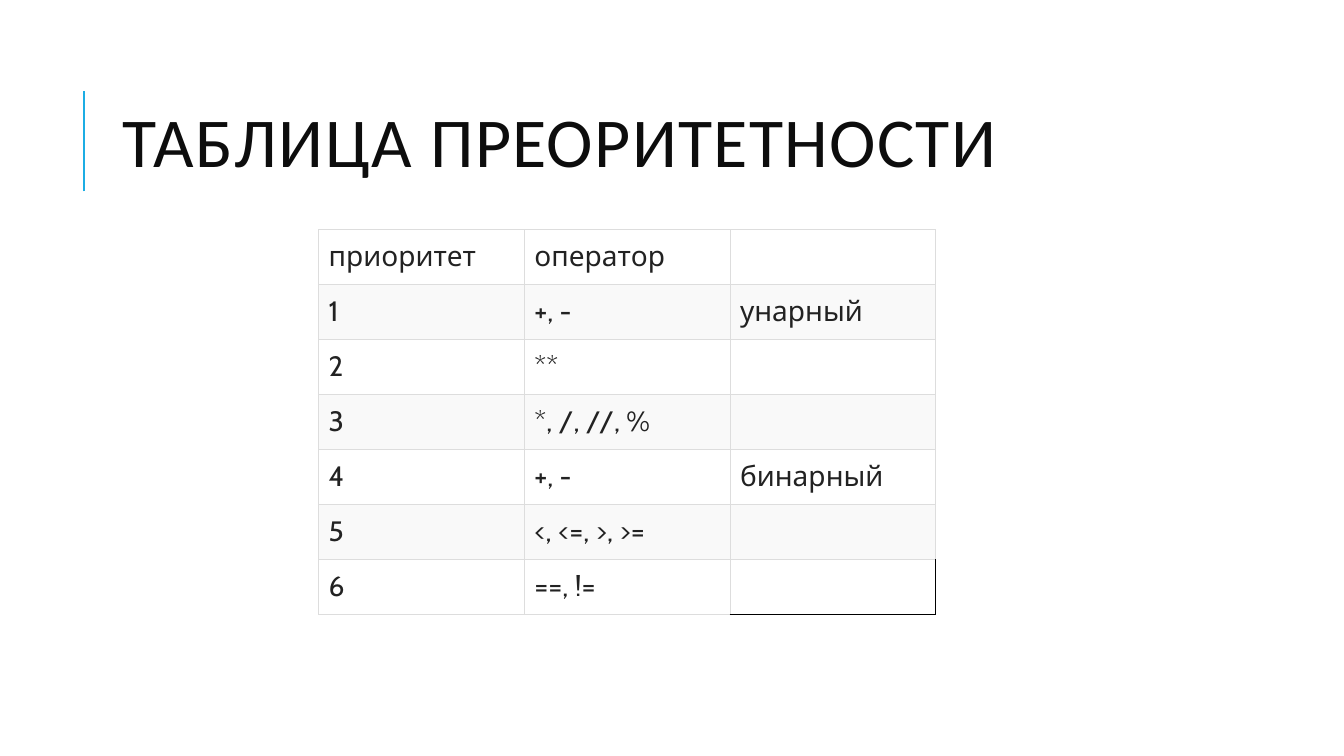
from dataclasses import dataclass

from lxml.etree import SubElement
from pptx import Presentation
from pptx.dml.color import RGBColor as Color
from pptx.enum.shapes import MSO_CONNECTOR as Connector
from pptx.enum.text import MSO_ANCHOR as Anchor
from pptx.oxml.ns import qn
from pptx.util import Inches, Pt


@dataclass(frozen=True)
class Theme:
    accent: str = "1CADE4"
    title_color: str = "0D0D0D"
    text_color: str = "222222"
    border: str = "DDDDDD"
    corner_border: str = "000000"
    row_fills: tuple[str, str] = ("FFFFFF", "F9F9F9")
    title_font: str = "Calibri"
    table_font: str = "Cabin"
    title_size: int = 50
    table_size: int = 20
    title_spacing: int = 100
    accent_width: float = 1.5
    border_width: float = 0.75


@dataclass(frozen=True)
class Box:
    """Position and size in percent of the slide."""
    left: float
    top: float
    width: float
    height: float

    def place(self) -> tuple[int, int, int, int]:
        return (across(self.left), down(self.top),
                across(self.width), down(self.height))


@dataclass(frozen=True)
class Priority:
    level: str
    operators: str
    note: str = ""

    def texts(self) -> tuple[str, str, str]:
        return self.level, self.operators, self.note


THEME = Theme()
SLIDE_WIDTH, SLIDE_HEIGHT = Inches(13.33), Inches(7.5)
COLUMN_WIDTH, ROW_HEIGHT = 15.31, 7.28
ACCENT_BOX = Box(6.25, 12, 0, 13.33)
TITLE_BOX = Box(8.4, 8.53, 79.74, 21.87)
TITLE = "ТАБЛИЦА ПРЕОРИТЕТНОСТИ"
PRIORITIES = [
    Priority("приоритет", "оператор"),
    Priority("1", "+, -", "унарный"),
    Priority("2", "**"),
    Priority("3", "*, /, //, %"),
    Priority("4", "+, -", "бинарный"),
    Priority("5", "<, <=, >, >="),
    Priority("6", "==, !="),
]
COLUMN_COUNT = len(PRIORITIES[0].texts())
TABLE_BOX = Box(23.7, 30.35, COLUMN_WIDTH * COLUMN_COUNT,
                ROW_HEIGHT * len(PRIORITIES))


def across(percent: float) -> int:
    return round(SLIDE_WIDTH * percent / 100)


def down(percent: float) -> int:
    return round(SLIDE_HEIGHT * percent / 100)


def style_font(font, name: str, size: int, color: str) -> None:
    font.name, font.size = name, Pt(size)
    font.color.rgb = Color.from_string(color)


def draw_accent(slide, box: Box) -> None:
    left, top, width, height = box.place()
    line = slide.shapes.add_connector(
        Connector.STRAIGHT, left, top + height, left + width, top)
    line.line.color.rgb = Color.from_string(THEME.accent)
    line.line.width = Pt(THEME.accent_width)
    SubElement(line._element.spPr, qn("a:effectLst"))


def draw_title(slide, text: str, box: Box) -> None:
    frame = slide.shapes.add_textbox(*box.place()).text_frame
    frame.word_wrap = True
    frame.vertical_anchor = Anchor.MIDDLE
    paragraph = frame.paragraphs[0]
    paragraph.line_spacing = 0.8
    run = paragraph.add_run()
    run.text = text
    style_font(paragraph.font, THEME.title_font, THEME.title_size,
               THEME.title_color)
    run.font._element.set("spc", str(THEME.title_spacing))


def set_borders(cell, colors: dict[str, str]) -> None:
    properties = cell._tc.get_or_add_tcPr()
    for side, color in colors.items():
        line = SubElement(properties, qn(f"a:ln{side}"),
                          w=str(Pt(THEME.border_width)))
        SubElement(SubElement(line, qn("a:solidFill")),
                   qn("a:srgbClr"), val=color)


def draw_table(slide, priorities: list[Priority], box: Box) -> None:
    table = slide.shapes.add_table(
        len(priorities), COLUMN_COUNT, *box.place()).table
    table.first_row = table.horz_banding = False
    for column in table.columns:
        column.width = across(COLUMN_WIDTH)
    for row_index, priority in enumerate(priorities):
        table.rows[row_index].height = down(ROW_HEIGHT)
        for column_index, text in enumerate(priority.texts()):
            cell = table.cell(row_index, column_index)
            cell.vertical_anchor = Anchor.MIDDLE
            cell.text = text
            style_font(cell.text_frame.paragraphs[0].font, THEME.table_font,
                       THEME.table_size, THEME.text_color)
            borders = dict.fromkeys("LRTB", THEME.border)
            # The last cell is unfilled, with dark outer edges
            is_corner = (row_index == len(priorities) - 1
                         and column_index == COLUMN_COUNT - 1)
            if is_corner:
                borders |= dict.fromkeys("RB", THEME.corner_border)
            set_borders(cell, borders)
            if is_corner:
                cell.fill.background()
            else:
                cell.fill.solid()
                cell.fill.fore_color.rgb = Color.from_string(
                    THEME.row_fills[row_index % 2])


def main() -> None:
    presentation = Presentation()
    presentation.slide_width = SLIDE_WIDTH
    presentation.slide_height = SLIDE_HEIGHT
    slide = presentation.slides.add_slide(presentation.slide_layouts[6])

    # Heading
    draw_accent(slide, ACCENT_BOX)
    draw_title(slide, TITLE, TITLE_BOX)

    # Operator priorities
    draw_table(slide, PRIORITIES, TABLE_BOX)

    presentation.save("out.pptx")


if __name__ == "__main__":
    main()
